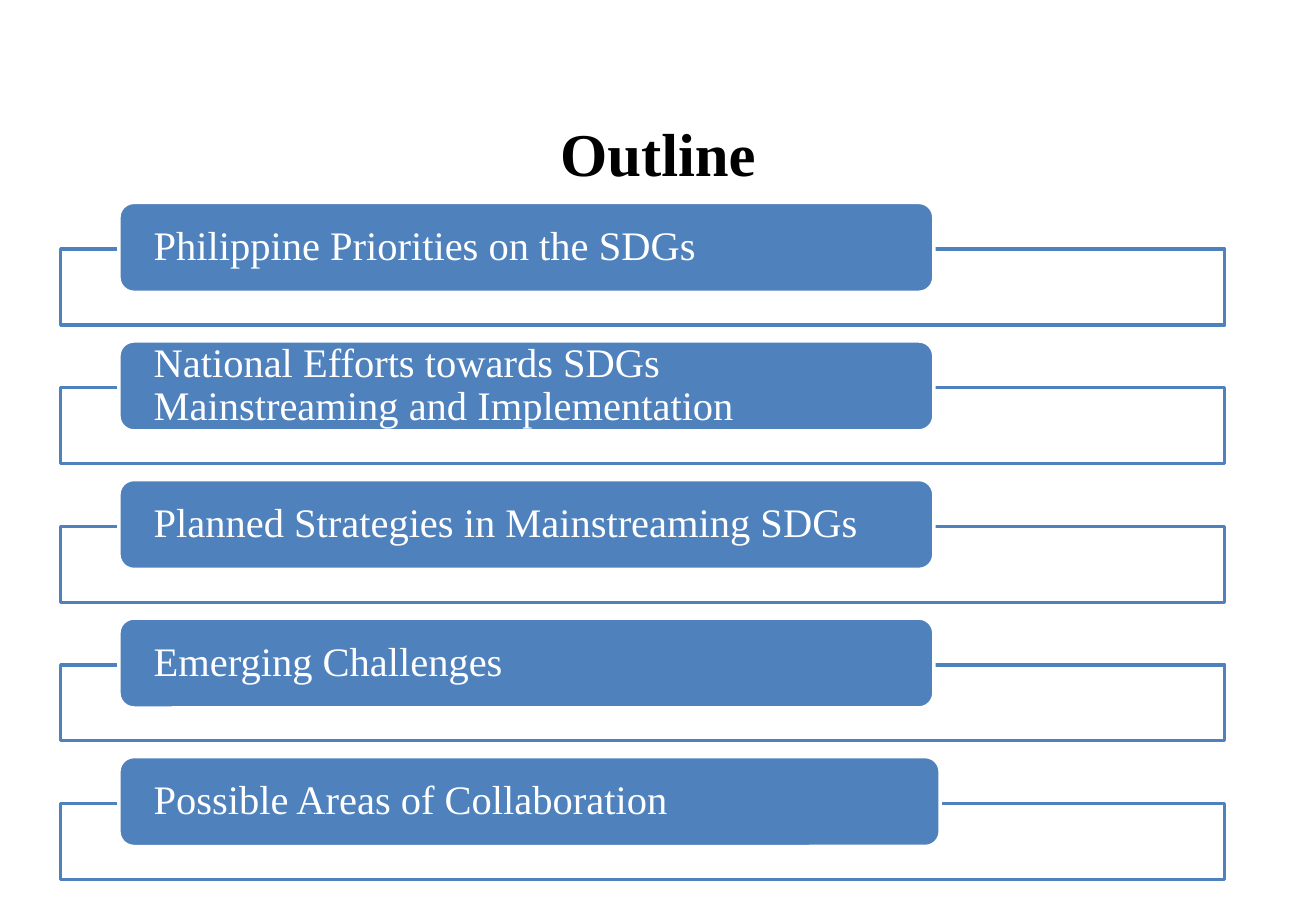
"""Build the outline slide: a title above five framed topic bars."""
import pptx
import pptx.dml.color
import pptx.enum.shapes
import pptx.enum.text
import pptx.oxml.ns
import pptx.util
from lxml import etree

TITLE = "Outline"
TOPICS = [
    ("Philippine Priorities on the SDGs", 644),
    ("National Efforts towards SDGs Mainstreaming and Implementation", 644),
    ("Planned Strategies in Mainstreaming SDGs", 644),
    ("Emerging Challenges", 644),
    ("Possible Areas of Collaboration", 649),
]

BLUE = pptx.dml.color.RGBColor(0x4F, 0x81, 0xBD)
WHITE = pptx.dml.color.RGBColor(0xFF, 0xFF, 0xFF)
BLACK = pptx.dml.color.RGBColor(0x00, 0x00, 0x00)
FONT = "Times New Roman"
SHAPES = pptx.enum.shapes.MSO_SHAPE
ALIGN = pptx.enum.text.PP_ALIGN

EMU_PER_PX = 9525
SLIDE_SIZE = (1040, 720)
TITLE_BOX = (160, 72, 720, 96)
FIRST_TOP, LAST_TOP = 160, 598
FRAME_LEFT, FRAME_DROP, FRAME_WIDTH, FRAME_HEIGHT = 48, 37, 920, 60
BAR_LEFT, BAR_HEIGHT, BAR_INSET = 94, 71, 24


def px(length):
    return pptx.util.Emu(int(length * EMU_PER_PX))


def write(shape, text, *, size, color, align, bold=False, spacing=None, inset=None):
    frame = shape.text_frame
    frame.word_wrap = True
    frame.vertical_anchor = pptx.enum.text.MSO_ANCHOR.MIDDLE
    if inset is not None:
        frame.margin_left = frame.margin_right = px(inset)
        frame.margin_top = frame.margin_bottom = 0
    paragraph = frame.paragraphs[0]
    paragraph.alignment = align
    paragraph.line_spacing = spacing
    run = paragraph.add_run()
    run.text = text
    run.font.name = FONT
    run.font.size = pptx.util.Pt(size)
    run.font.bold = bold
    run.font.color.rgb = color


def add_box(slide, kind, box, fill, line, opacity=100):
    shape = slide.shapes.add_shape(kind, *map(px, box))
    shape.shadow.inherit = False
    shape.fill.solid()
    shape.fill.fore_color.rgb = fill
    shape.line.color.rgb = line
    shape.line.width = pptx.util.Pt(2)
    if opacity < 100:
        color = shape.fill._xPr.find(".//" + pptx.oxml.ns.qn("a:srgbClr"))
        etree.SubElement(color, pptx.oxml.ns.qn("a:alpha"), val=str(opacity * 1000))
    return shape


def main():
    deck = pptx.Presentation()
    deck.slide_width, deck.slide_height = map(px, SLIDE_SIZE)
    slide = deck.slides.add_slide(deck.slide_layouts[5])

    title = slide.shapes.title
    title.left, title.top, title.width, title.height = map(px, TITLE_BOX)
    write(title, TITLE, size=36, color=BLACK, align=ALIGN.CENTER, bold=True)

    pitch = (LAST_TOP - FIRST_TOP) / (len(TOPICS) - 1)
    for row, (topic, bar_width) in enumerate(TOPICS):
        top = FIRST_TOP + row * pitch
        add_box(slide, SHAPES.RECTANGLE,
                (FRAME_LEFT, top + FRAME_DROP, FRAME_WIDTH, FRAME_HEIGHT),
                WHITE, BLUE, opacity=90)
        bar = add_box(slide, SHAPES.ROUNDED_RECTANGLE,
                      (BAR_LEFT, top, bar_width, BAR_HEIGHT), BLUE, WHITE)
        write(bar, topic, size=24, color=WHITE, align=ALIGN.LEFT,
              spacing=0.9, inset=BAR_INSET)

    deck.save("out.pptx")


if __name__ == "__main__":
    main()
